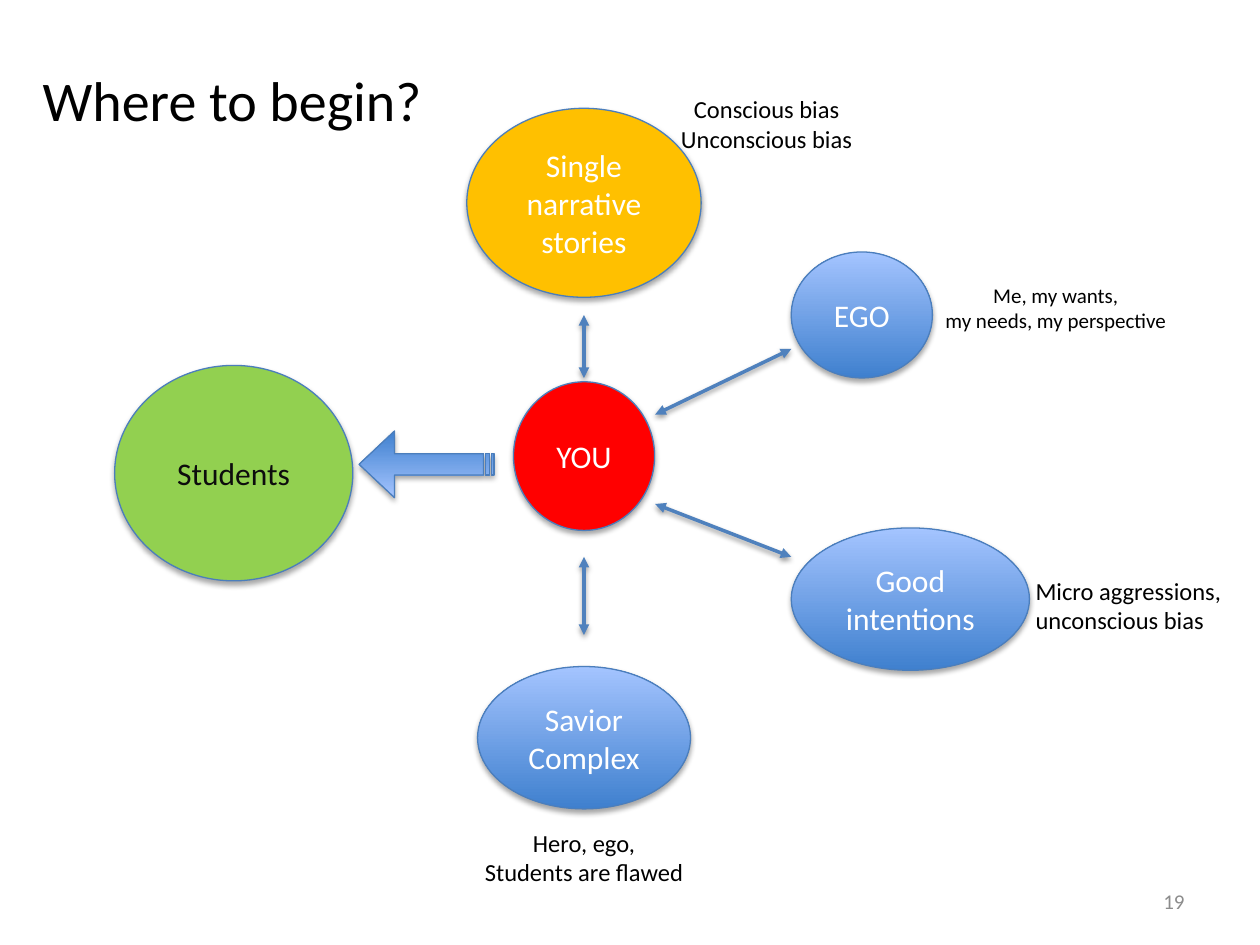
from lxml import etree
from pptx import Presentation, util as u
from pptx.dml.color import RGBColor
from pptx.enum import shapes, text
from pptx.oxml.ns import qn

THEME = {
    "font": "Calibri",
    "black": "000000", "white": "FFFFFF", "ink": "0D0D0D", "gray": "8C8C8C",
    "red": "FF0000", "amber": "FFC000", "green": "92D050",
    "blue": ("3F80CE", "A4C4FF"), "outline": "4B7EBC", "link": "4F81BD",
    "title": 32, "node": 18, "note": 14, "small": 12,
    "outline_width": 0.75, "link_width": 2,
}
SLIDE_WIDTH, SLIDE_HEIGHT = u.Inches(10), u.Inches(7.5)
COLUMNS, ROWS = 100, 75
AXIS = 46.35   # column shared by the centres of the vertical chain
BRANCH = 62.8  # column where the right-hand ideas begin
YOU_RIGHT = AXIS + 5.65

# label, left, top, width, height, fill, ink
NODES = [
    ("YOU", AXIS - 5.6, 30.3, 11.2, 11.8, "red", "white"),
    ("EGO", BRANCH, 20, 11.2, 10, "blue", "white"),
    ("Savior Complex", AXIS - 8.45, 52.9, 16.9, 11.3, "blue", "white"),
    ("Good intentions", BRANCH, 41.9, 18.9, 11.3, "blue", "white"),
    ("Single narrative stories", AXIS - 9.3, 8.6, 18.6, 15, "amber", "white"),
    ("Students", 9.1, 29, 18.9, 17.1, "green", "ink"),
]
# from column, from row, to column, to row
LINKS = [
    (YOU_RIGHT, 32.9, BRANCH, 27.7),
    (YOU_RIGHT, 40, BRANCH, 44.2),
    (AXIS, 44.2, AXIS, 50.4),
    (AXIS, 25, AXIS, 30),
]
ARROW_TO_STUDENTS = (28.5, 34.2, 10.7, 5.3)
TITLE = ("Where to begin?", 2.4, 4.7, 95.1, 67.6)
# lines, left, top, width, height, size, alignment, wrap
NOTES = [
    (["Me, my wants,", "my needs, my perspective"], 72, 21.9, 23.6, 8.1, "small", "CENTER", True),
    (["Micro aggressions,", "unconscious bias"], 81.2, 45.2, 16.9, 5.7, "note", "LEFT", False),
    (["Hero, ego,", "Students are flawed"], 37.4, 65.2, 17.9, 5.7, "note", "CENTER", False),
    (["Conscious bias", "Unconscious bias"], 53, 7, 15.7, 5.7, "note", "CENTER", False),
]
PAGE_NUMBER = ("19", 71.7, 69.5, 23.3, 4)


def grid(*lengths):
    """Turn alternating column and row lengths into slide units."""
    return [int(SLIDE_HEIGHT * n / ROWS if i % 2 else SLIDE_WIDTH * n / COLUMNS)
            for i, n in enumerate(lengths)]


def rgb(name):
    return RGBColor.from_string(THEME[name])


def assign(target, values):
    for name, value in values.items():
        setattr(target, name, value)


def write(frame, lines, size, ink, align, anchor="TOP", wrap=True):
    assign(frame, {"word_wrap": wrap, "vertical_anchor": getattr(text.MSO_ANCHOR, anchor)})
    for i, line in enumerate(lines):
        paragraph = frame.add_paragraph() if i else frame.paragraphs[0]
        paragraph.alignment = getattr(text.PP_ALIGN, align)
        run = paragraph.add_run()
        run.text = line
        assign(run.font, {"name": THEME["font"], "size": u.Pt(THEME[size])})
        run.font.color.rgb = rgb(ink)


def cast_shadow(part, distance, opacity):
    properties = part._element.spPr
    effects = properties.find(qn("a:effectLst"))
    if effects is None:
        effects = etree.SubElement(properties, qn("a:effectLst"))
    shadow = etree.SubElement(effects, qn("a:outerShdw"), blurRad=str(u.Pt(3.1)),
                              dist=str(u.Pt(distance)), dir="5400000", rotWithShape="0")
    color = etree.SubElement(shadow, qn("a:srgbClr"), val=THEME["black"])
    etree.SubElement(color, qn("a:alpha"), val=str(opacity * 1000))


def add_solid(slide, kind, place, fill):
    """Add an outlined shape with a shadow and a plain or graded fill."""
    solid = slide.shapes.add_shape(kind, *grid(*place))
    solid.shadow.inherit = False
    if isinstance(THEME[fill], tuple):
        solid.fill.gradient()
        solid.fill.gradient_angle = 90
        for stop, tone in zip(solid.fill.gradient_stops, THEME[fill]):
            stop.color.rgb = RGBColor.from_string(tone)
    else:
        solid.fill.solid()
        solid.fill.fore_color.rgb = rgb(fill)
    solid.line.color.rgb = rgb("outline")
    solid.line.width = u.Pt(THEME["outline_width"])
    cast_shadow(solid, 1.8, 35)
    return solid


def add_link(slide, ends):
    link = slide.shapes.add_connector(shapes.MSO_CONNECTOR.STRAIGHT, *grid(*ends))
    link.line.color.rgb = rgb("link")
    link.line.width = u.Pt(THEME["link_width"])
    outline = link._element.spPr.find(qn("a:ln"))
    for end in ("a:headEnd", "a:tailEnd"):
        etree.SubElement(outline, qn(end), type="triangle")
    cast_shadow(link, 1.6, 38)


def main():
    deck = Presentation()
    assign(deck, {"slide_width": SLIDE_WIDTH, "slide_height": SLIDE_HEIGHT})
    slide = deck.slides.add_slide(deck.slide_layouts[6])

    heading, *place = TITLE
    title = slide.shapes.add_textbox(*grid(*place)).text_frame
    write(title, [heading], "title", "black", "LEFT")
    title.paragraphs[0].space_before = u.Pt(THEME["title"] * 0.2)

    for ends in LINKS:
        add_link(slide, ends)
    for label, *place, fill, ink in NODES:
        node = add_solid(slide, shapes.MSO_SHAPE.OVAL, place, fill)
        write(node.text_frame, [label], "node", ink, "CENTER", "MIDDLE")

    arrow = add_solid(slide, shapes.MSO_SHAPE.STRIPED_RIGHT_ARROW, ARROW_TO_STUDENTS, "blue")
    arrow.rotation = 180
    arrow.adjustments[0], arrow.adjustments[1] = 0.32, 0.53

    for lines, *place, size, align, wrap in NOTES:
        note = slide.shapes.add_textbox(*grid(*place)).text_frame
        write(note, lines, size, "black", align, wrap=wrap)
        note.auto_size = text.MSO_AUTO_SIZE.SHAPE_TO_FIT_TEXT

    number, *place = PAGE_NUMBER
    footer = slide.shapes.add_textbox(*grid(*place)).text_frame
    write(footer, [number], "small", "gray", "RIGHT", "MIDDLE")

    deck.save("out.pptx")


if __name__ == "__main__":
    main()
